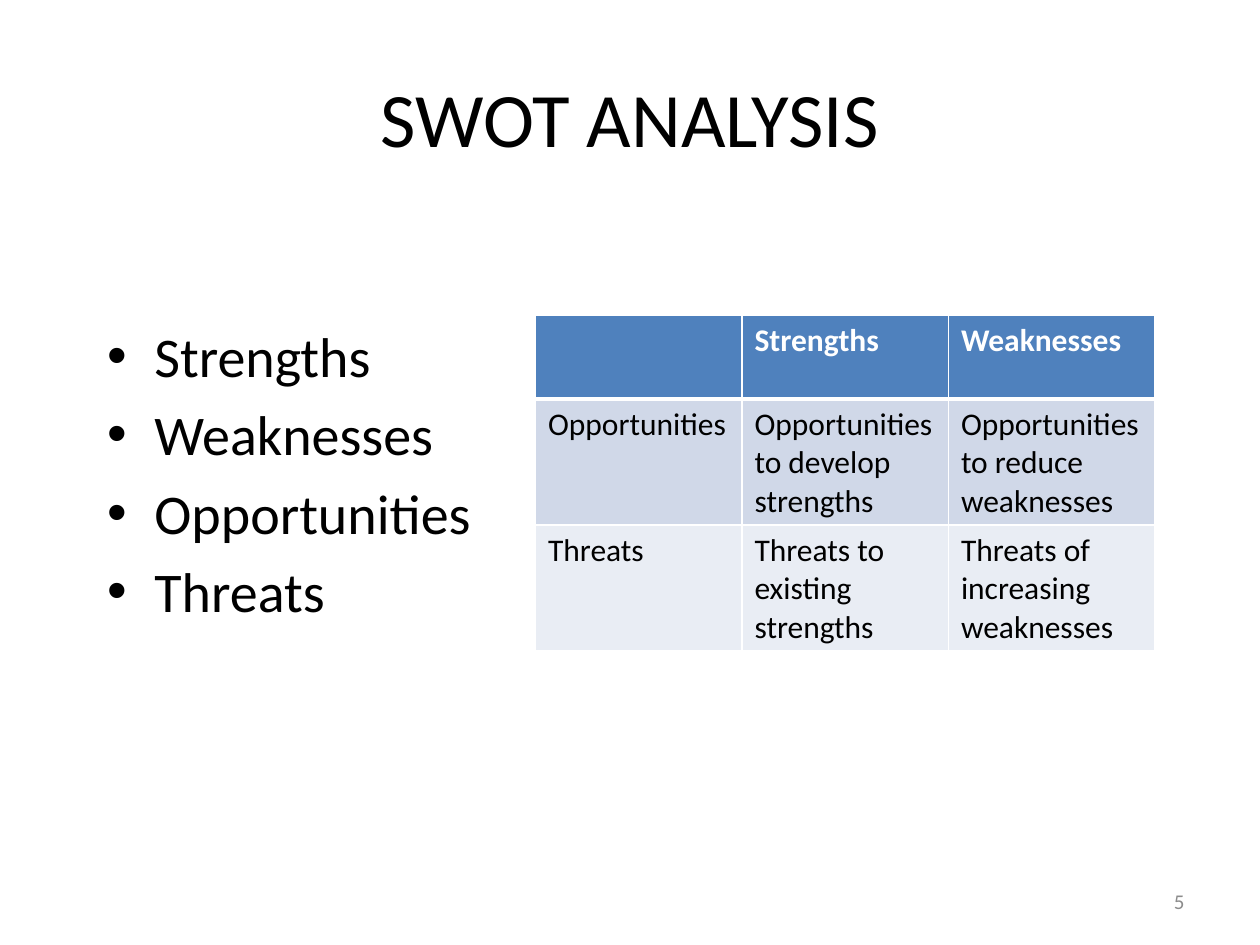
from lxml import etree
from pptx import Presentation
from pptx.dml import color
from pptx.enum import text
from pptx.oxml import ns
from pptx.util import Pt

COLORS = {
    "ink": "000000",
    "white": "FFFFFF",
    "number": "8C8C8C",
    "header": "4F81BD",
    "band_dark": "D0D8E8",
    "band_light": "E9EDF4",
}
FACTORS = ["Strengths", "Weaknesses", "Opportunities", "Threats"]
MATRIX = [
    ["", "Strengths", "Weaknesses"],
    ["Opportunities", "Opportunities to develop strengths", "Opportunities to reduce weaknesses"],
    ["Threats", "Threats to existing strengths", "Threats of increasing weaknesses"],
]
ROW_HEIGHTS = [48, 72, 72]
ROW_FILLS = ["header", "band_dark", "band_light"]


def rgb(name):
    return color.RGBColor.from_string(COLORS[name])


def write(paragraph, words, size=18, ink="ink", bold=False, align=None, font="Calibri"):
    paragraph.alignment = align
    run = paragraph.add_run()
    run.text = words
    run.font.name = font
    run.font.size = Pt(size)
    run.font.bold = bold
    run.font.color.rgb = rgb(ink)


def border(cell, side, width):
    line = etree.SubElement(cell._tc.get_or_add_tcPr(), ns.qn(f"a:ln{side}"), w=str(Pt(width)))
    fill = etree.SubElement(line, ns.qn("a:solidFill"))
    etree.SubElement(fill, ns.qn("a:srgbClr"), val=COLORS["white"])


class SwotSlide:
    def __init__(self, presentation):
        self.slide = presentation.slides.add_slide(presentation.slide_layouts[1])

    def place(self, shape, left, top, width, height):
        shape.left, shape.top = Pt(left), Pt(top)
        shape.width, shape.height = Pt(width), Pt(height)
        return shape.text_frame

    def title(self, words, *box):
        frame = self.place(self.slide.shapes.title, *box)
        frame.vertical_anchor = text.MSO_ANCHOR.MIDDLE
        write(frame.paragraphs[0], words, size=44, align=text.PP_ALIGN.CENTER)

    def bullets(self, items, *box):
        frame = self.place(self.slide.placeholders[1], *box)
        for index, item in enumerate(items):
            paragraph = frame.add_paragraph() if index else frame.paragraphs[0]
            write(paragraph, item, size=32)
        frame.paragraphs[0].space_before = Pt(0)

    def page_number(self, words, *box):
        frame = self.slide.shapes.add_textbox(*map(Pt, box)).text_frame
        frame.word_wrap = True
        frame.vertical_anchor = text.MSO_ANCHOR.MIDDLE
        write(frame.paragraphs[0], words, size=12, ink="number", align=text.PP_ALIGN.RIGHT)

    def table(self, rows, left, top, width):
        box = map(Pt, (left, top, width, sum(ROW_HEIGHTS)))
        table = self.slide.shapes.add_table(len(rows), len(rows[0]), *box).table
        for index, row in enumerate(rows):
            table.rows[index].height = Pt(ROW_HEIGHTS[index])
            header = index == 0
            for column, words in enumerate(row):
                cell = table.cell(index, column)
                for side in "LRTB":
                    thick = (header and side == "B") or (index == 1 and side == "T")
                    border(cell, side, 3 if thick else 1)
                cell.fill.solid()
                cell.fill.fore_color.rgb = rgb(ROW_FILLS[index])
                if words:
                    write(cell.text_frame.paragraphs[0], words,
                          ink="white" if header else "ink", bold=header)


def main():
    presentation = Presentation()
    presentation.slide_width, presentation.slide_height = Pt(720), Pt(540)
    page = SwotSlide(presentation)
    page.title("SWOT ANALYSIS", 36, 21.6, 648, 90)
    page.bullets(FACTORS, 54, 180, 276, 216)
    page.page_number("5", 516, 500.5, 168, 28.75)
    page.table(MATRIX, 306, 180, 354)
    presentation.save("out.pptx")


if __name__ == "__main__":
    main()
